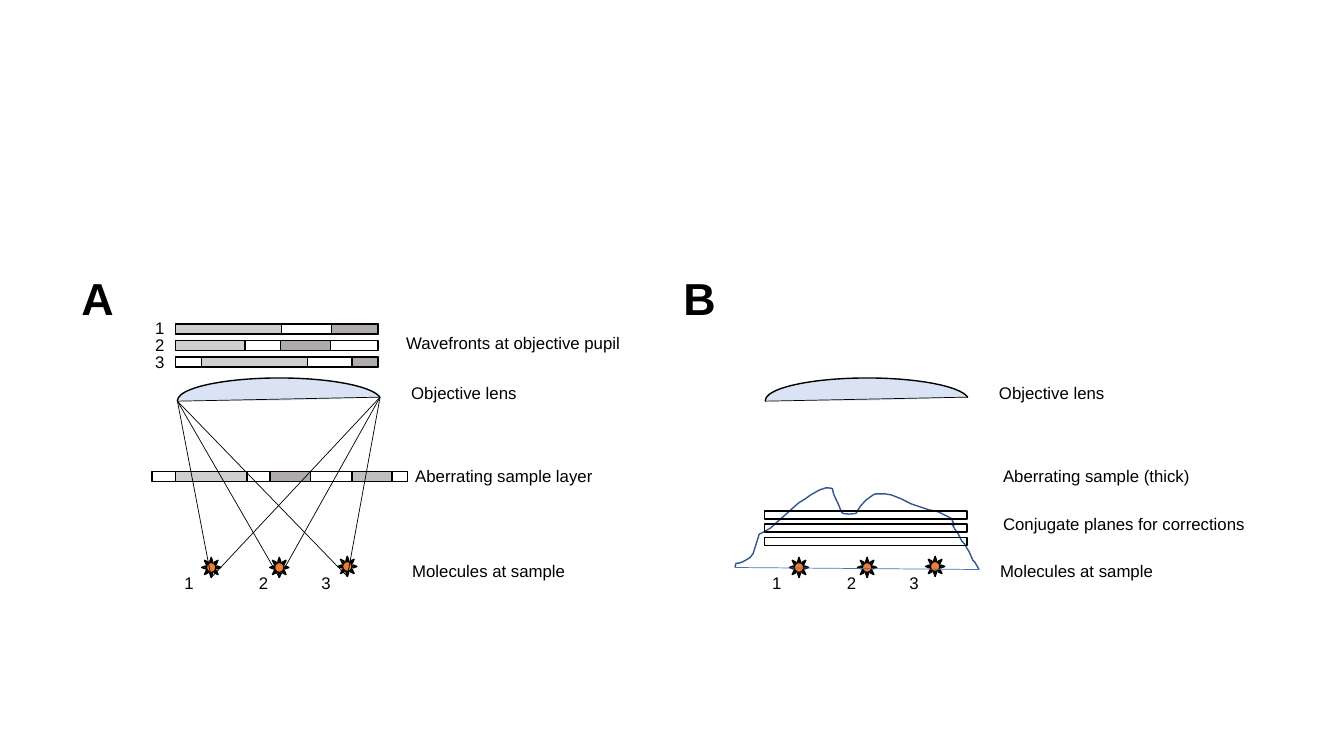
import pptx
import pptx.dml.color
import pptx.enum.shapes
import pptx.enum.text
import pptx.oxml
import pptx.oxml.ns
import pptx.util

SHAPE = pptx.enum.shapes.MSO_SHAPE
CELL = 0.1  # inches per grid column and row
PANEL_B = 58.3  # columns from panel A to panel B

LIGHT, MIDDLE, DARK = "D0CECE", "BFBFBF", "AFABAB"
BLACK, LENS, MOLECULE = "000000", "DAE3F3", "ED7D31"

# Each wavefront: top row, then (left, width, colour) of its segments
WAVEFRONTS = [
    (35.4, [(20, 10.5, LIGHT), (34.9, 2.6, DARK)]),
    (33.8, [(17.4, 6.9, LIGHT), (27.8, 5, DARK)]),
    (32.15, [(17.4, 10.5, LIGHT), (32.9, 4.6, DARK)]),
]
LAYER_SEGMENTS = [(17.4, 7.1, LIGHT), (26.8, 4, DARK), (34.9, 4, MIDDLE)]
MOLECULES = [(20, 55.3), (26.75, 55.3), (33.5, 55.2)]
MOLECULE_NUMBERS = [17.3, 24.7, 30.9]

# Two numbers are a corner; six are a Bezier curve (two handles and its end)
SAMPLE_OUTLINE = [
    (72.9, 56.3), (73.1, 55.4, 72.8, 56.4, 74.4, 55.3), (74.7, 54.9),
    (75.3, 53), (75.7, 52.8), (76.4, 52.4), (78.3, 50.7), (79.2, 49.9),
    (80, 49.4), (80.4, 49.1), (81.3, 48.6), (81.9, 48.4), (82.1, 48.4),
    (82.9, 48.5, 82.3, 48.3, 82.9, 49.5),
    (83.7, 51.1, 83.2, 50.9, 84.2, 51),
    (85.5, 50.9, 84.4, 51.1, 85.9, 49.6),
    (86.6, 49.1), (86.8, 49), (87.8, 49), (88.4, 49.1), (88.9, 49.3),
    (89.4, 49.5), (90.4, 50), (92.2, 50.6), (92.8, 50.7), (93.1, 50.8),
    (94.3, 51.4), (94.5, 51.7), (95, 52.8, 93.9, 51.1, 94.7, 52.5),
    (95, 52.9), (95.4, 53.7), (95.7, 54), (95.9, 54.4), (96.1, 54.7),
    (96.5, 55.6), (96.7, 55.8), (97.1, 56.5),
]


def grid(cells):
    return pptx.util.Inches(cells * CELL)


def colour(value):
    return pptx.dml.color.RGBColor.from_string(value)


def set_line(item, line, width):
    item.line.color.rgb = colour(line)
    item.line.width = pptx.util.Pt(width)


def set_fill(shape, fill):
    if fill:
        shape.fill.solid()
        shape.fill.fore_color.rgb = colour(fill)
    else:
        shape.fill.background()


def add_outlined(slide, kind, left, top, width, height, fill=None):
    shape = slide.shapes.add_shape(kind, *map(grid, (left, top, width, height)))
    shape.shadow.inherit = False
    set_fill(shape, fill)
    set_line(shape, BLACK, 1)
    return shape


def add_line(slide, start, end, line=BLACK):
    connector = slide.shapes.add_connector(
        pptx.enum.shapes.MSO_CONNECTOR.STRAIGHT, *map(grid, (*start, *end)))
    set_line(connector, line, 0.5)
    properties = connector._element.spPr
    properties.append(pptx.oxml.parse_xml(
        "<a:effectLst %s/>" % pptx.oxml.ns.nsdecls("a")))


def add_label(slide, text, left, top, width=2.9, height=3, size=12, bold=False):
    box = slide.shapes.add_textbox(*map(grid, (left, top, width, height)))
    frame = box.text_frame
    frame.word_wrap = False
    frame.auto_size = pptx.enum.text.MSO_AUTO_SIZE.SHAPE_TO_FIT_TEXT
    run = frame.paragraphs[0].add_run()
    run.text = text
    formats = {"name": "Arial", "size": pptx.util.Pt(size), "bold": bold}
    for name, value in formats.items():
        setattr(run.font, name, value)
    run.font.color.rgb = colour(BLACK)


def add_strip(slide, left, top, width, segments):
    """Draw an open bar and its shaded segments."""
    add_outlined(slide, SHAPE.RECTANGLE, left, top, width, 1)
    for segment_left, segment_width, fill in segments:
        add_outlined(slide, SHAPE.RECTANGLE, segment_left, top, segment_width, 1, fill)


def bezier(start, numbers, steps=10):
    """Return points along a cubic curve after its start."""
    points = [start, numbers[:2], numbers[2:4], numbers[4:]]
    curve = []
    for step in range(1, steps + 1):
        t = step / steps
        weights = [(1 - t) ** 3, 3 * t * (1 - t) ** 2, 3 * t ** 2 * (1 - t), t ** 3]
        curve.append(tuple(
            sum(weight * point[axis] for weight, point in zip(weights, points))
            for axis in (0, 1)))
    return curve


def add_sample_outline(slide):
    points = [SAMPLE_OUTLINE[0]]
    for part in SAMPLE_OUTLINE[1:]:
        points.extend([part] if len(part) == 2 else bezier(points[-1], part))
    points = [(grid(x), grid(y)) for x, y in points]
    builder = slide.shapes.build_freeform(*points[0])
    builder.add_line_segments(points[1:], close=False)
    outline = builder.convert_to_shape()
    outline.shadow.inherit = False
    set_fill(outline, None)
    set_line(outline, "325491", 1)


def add_optics(slide, offset):
    """Draw what both panels share: lens, molecules and their labels."""
    lens = add_outlined(slide, SHAPE.ARC, 17.6 + offset, 37.5, 20.2, 4.5, LENS)
    lens.adjustments[0] = 107.85
    lens.adjustments[1] = 214.91
    add_line(slide, (17.6 + offset, 39.8), (37.7 + offset, 39.4))
    for left, top in MOLECULES:
        add_outlined(slide, SHAPE.SUN, left + offset, top, 1.9, 2, MOLECULE)
    for number, left in enumerate(MOLECULE_NUMBERS, 1):
        add_label(slide, str(number), left + offset, 56.3)
    add_label(slide, "Objective lens", 39.8 + offset, 37.5, 12.6)
    add_label(slide, "Molecules at sample", 39.9 + offset, 55.1, 17.3)


def add_panel_a(slide):
    add_label(slide, "A", 7.1, 26.4, 5.3, 6.4, 32, True)
    add_strip(slide, 15.1, 46.8, 25.3, LAYER_SEGMENTS)
    add_optics(slide, 0)
    for left, top in MOLECULES:
        for lens_edge in [(17.6, 39.8), (37.7, 39.4)]:
            add_line(slide, (left + 0.95, top + 2), lens_edge)
    for top, segments in WAVEFRONTS:
        add_strip(slide, 17.4, top, 20.1, segments)
    for index in range(3):
        add_label(slide, str(index + 1), 14.4, 31 + 1.7 * index)
    add_label(slide, "Wavefronts at objective pupil", 39.3, 32.5, 23.4)
    add_label(slide, "Aberrating sample layer", 40.2, 45.7, 19.7)


def add_panel_b(slide):
    add_label(slide, "B", 66.8, 26.4, 5.3, 6.4, 32, True)
    add_optics(slide, PANEL_B)
    add_sample_outline(slide)
    add_line(slide, SAMPLE_OUTLINE[0], SAMPLE_OUTLINE[-1], "4472C4")
    for index in range(3):
        add_outlined(slide, SHAPE.RECTANGLE, 75.8, 50.7 + 1.3 * index, 20.1, 0.8)
    add_label(slide, "Aberrating sample (thick)", 98.5, 45.7, 20.7)
    add_label(slide, "Conjugate planes for corrections", 98.5, 50.5, 26.2)


def main():
    presentation = pptx.Presentation()
    presentation.slide_width = pptx.util.Inches(13.33)
    presentation.slide_height = pptx.util.Inches(7.5)
    slide = presentation.slides.add_slide(presentation.slide_layouts[6])
    add_panel_a(slide)
    add_panel_b(slide)
    presentation.save("out.pptx")


if __name__ == "__main__":
    main()
